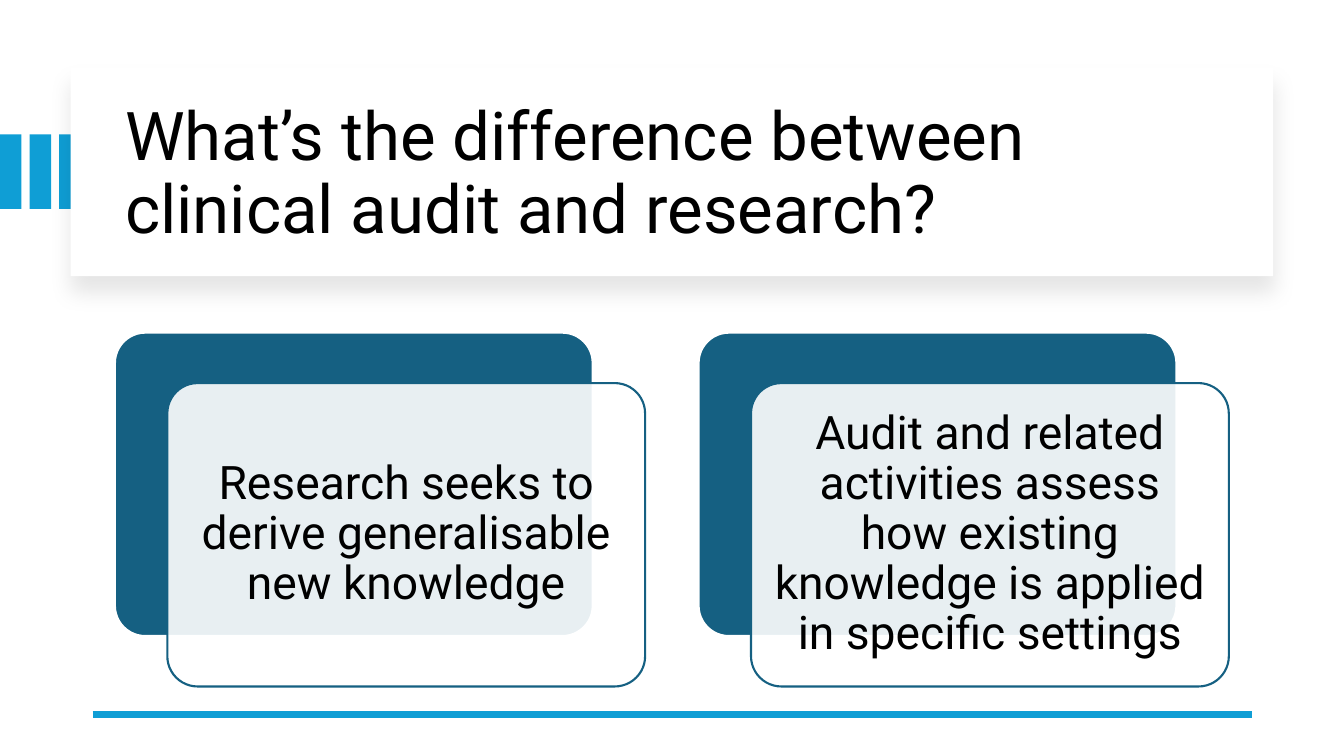
from lxml.etree import SubElement
from pptx import Presentation
from pptx.dml.color import RGBColor
from pptx.enum.shapes import MSO_CONNECTOR, MSO_SHAPE
from pptx.enum.text import MSO_ANCHOR, MSO_AUTO_SIZE, PP_ALIGN
from pptx.oxml.ns import qn
from pptx.util import Inches, Pt

COLORS = {"sky": "0F9ED5", "teal": "156082", "white": "FFFFFF", "black": "000000"}

presentation = Presentation()
presentation.slide_width = Inches(13.33)
presentation.slide_height = Inches(7.5)
column = presentation.slide_width / 100
row = presentation.slide_height / 100


def add_box(kind, left, top, width, height, fill, line=None):
    shape = slide.shapes.add_shape(
        kind, int(left * column), int(top * row), int(width * column), int(height * row))
    shape.shadow.inherit = False
    shape.fill.solid()
    shape.fill.fore_color.rgb = RGBColor.from_string(COLORS[fill])
    if line:
        shape.line.color.rgb = RGBColor.from_string(COLORS[line])
        shape.line.width = Pt(1.5)
    else:
        shape.line.fill.background()
    return shape


def write_text(shape, text, size, align, inset):
    frame = shape.text_frame
    frame.word_wrap = True
    frame.auto_size = MSO_AUTO_SIZE.NONE
    frame.vertical_anchor = MSO_ANCHOR.MIDDLE
    frame.margin_left = frame.margin_right = Inches(inset)
    frame.margin_top = frame.margin_bottom = Inches(inset)
    paragraph = frame.paragraphs[0]
    paragraph.alignment = align
    paragraph.line_spacing = 0.9
    run = paragraph.add_run()
    run.text = text
    run.font.name = "Roboto"
    run.font.size = Pt(size)
    run.font.color.rgb = RGBColor.from_string(COLORS["black"])


slide = presentation.slides.add_slide(presentation.slide_layouts[5])
slide.background.fill.solid()
slide.background.fill.fore_color.rgb = RGBColor.from_string(COLORS["white"])

for index in range(3):
    add_box(MSO_SHAPE.RECTANGLE, index * 2.2, 17.78, 1.6, 9.87, "sky")

banner = add_box(MSO_SHAPE.RECTANGLE, 5.25, 8.93, 89.48, 27.6, "white")
effects = banner.element.spPr.find(qn("a:effectLst"))
shadow = SubElement(effects, qn("a:outerShdw"), blurRad=str(Pt(15)), dist=str(Pt(11)),
                    dir="5400000", algn="t", rotWithShape="0")
shadow_color = SubElement(shadow, qn("a:srgbClr"), val=COLORS["black"])
SubElement(shadow_color, qn("a:alpha"), val="10000")

title = slide.shapes.title
title.left, title.top = int(8.55 * column), int(11.87 * row)
title.width, title.height = int(83.48 * column), int(22.67 * row)
write_text(title, "What’s the difference between clinical audit and research?",
           size=48, align=PP_ALIGN.LEFT, inset=0.1)
banner.element.addnext(title.element)

rule = slide.shapes.add_connector(
    MSO_CONNECTOR.STRAIGHT, int(6.9 * column), int(94.53 * row),
    int(93.15 * column), int(94.53 * row))
rule.line.color.rgb = RGBColor.from_string(COLORS["sky"])
rule.line.width = Pt(4.5)
SubElement(rule.element.spPr, qn("a:effectLst"))

statements = [
    "Research seeks to derive generalisable new knowledge",
    "Audit and related activities assess how existing knowledge is applied in specific settings",
]
for index, statement in enumerate(statements):
    left = 8.55 + index * 43.43
    back = add_box(MSO_SHAPE.ROUNDED_RECTANGLE, left, 44, 35.55, 40.13, "teal", "white")
    card = add_box(MSO_SHAPE.ROUNDED_RECTANGLE, left + 3.9, 50.67, 35.55, 40.13, "white", "teal")
    back.adjustments[0] = card.adjustments[0] = 0.1
    card_color = card.element.spPr.find(qn("a:solidFill")).find(qn("a:srgbClr"))
    SubElement(card_color, qn("a:alpha"), val="90000")
    write_text(card, statement, size=33, align=PP_ALIGN.CENTER, inset=0.14)

presentation.save("out.pptx")
